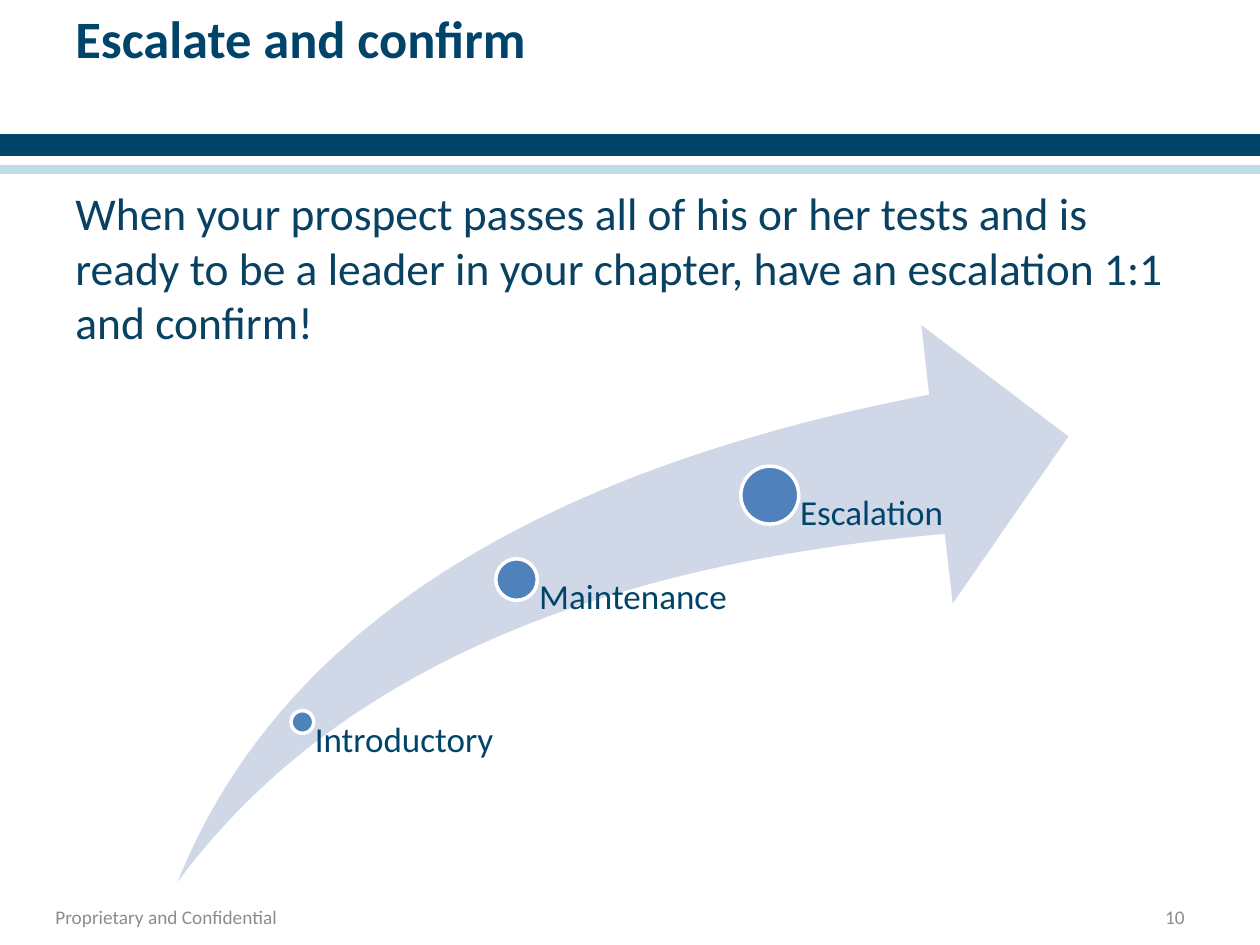
from pptx import Presentation
from pptx.dml.color import RGBColor
from pptx.enum.shapes import MSO_SHAPE as Shape
from pptx.enum.text import MSO_ANCHOR as Anchor, PP_ALIGN as Align
from pptx.util import Inches, Pt

NAVY = "00446A"
BODY_BLUE = "094163"
PALE_BLUE = "C2DBE8"
ARROW_BLUE = "D0D8E8"
DOT_BLUE = "4F81BD"
GREY = "8C8C8C"
WHITE = "FFFFFF"

BANDS = [(1.08, 0.25, NAVY), (1.25, 0.05, WHITE), (1.32, 0.05, PALE_BLUE)]
ARROW_BOTTOM = 7.0
# label, centre x, centre y, dot diameter, label indent, label width
STAGES = [
    ("Introductory", 2.4, 5.73, 0.18, 0.1, 1.65),
    ("Maintenance", 4.1, 4.6, 0.33, 0.18, 1.7),
    ("Escalation", 6.11, 3.93, 0.46, 0.24, 1.7),
]


def color(hex_string):
    return RGBColor.from_string(hex_string)


def add_shape(slide, kind, box, fill, line=None):
    shape = slide.shapes.add_shape(kind, *map(Inches, box))
    shape.shadow.inherit = False
    shape.fill.solid()
    shape.fill.fore_color.rgb = color(fill)
    if line:
        shape.line.color.rgb = color(line)
        shape.line.width = Pt(2)
    else:
        shape.line.fill.background()
    return shape


def add_text(slide, text, box, size, font_color, bold=False, align=Align.LEFT,
             anchor=Anchor.TOP, insets=(0.1, 0.05, 0.1, 0.05)):
    """Add a wrapped text box and return its paragraph; insets run left, top, right, bottom."""
    text_frame = slide.shapes.add_textbox(*map(Inches, box)).text_frame
    text_frame.word_wrap = True
    text_frame.vertical_anchor = anchor
    (text_frame.margin_left, text_frame.margin_top,
     text_frame.margin_right, text_frame.margin_bottom) = map(Inches, insets)
    text_frame.text = text
    paragraph = text_frame.paragraphs[0]
    paragraph.alignment = align
    font = paragraph.runs[0].font
    font.name = "Calibri"
    font.size = Pt(size)
    font.bold = bold
    font.color.rgb = color(font_color)
    return paragraph


def add_stage(slide, label, x, y, diameter, indent, width):
    """Add a dot with its label hanging from the dot's centre."""
    radius = diameter / 2
    add_shape(slide, Shape.OVAL, (x - radius, y - radius, diameter, diameter),
              DOT_BLUE, WHITE)
    paragraph = add_text(slide, label, (x, y, width, ARROW_BOTTOM - y), 20, NAVY,
                         insets=(indent, 0, 0, 0))
    paragraph.line_spacing = 0.9


def add_footer(slide):
    add_text(slide, "Proprietary and Confidential", (0.33, 7.1, 2.57, 0.35), 11, GREY,
             anchor=Anchor.MIDDLE, insets=(0.11, 0.06, 0.11, 0.06))
    add_text(slide, "10", (7.17, 7.1, 2.33, 0.35), 11, GREY,
             align=Align.RIGHT, anchor=Anchor.MIDDLE)


def main():
    presentation = Presentation()
    presentation.slide_width = Inches(10)
    presentation.slide_height = Inches(7.5)
    slide = presentation.slides.add_slide(presentation.slide_layouts[6])

    for top, height, fill in BANDS:
        add_shape(slide, Shape.RECTANGLE, (0, top, 10, height), fill, fill)
    add_footer(slide)
    add_text(slide, "Escalate and confirm", (0.5, 0, 9, 1.25), 30, NAVY, bold=True)
    add_text(slide, "When your prospect passes all of his or her tests and is ready to be "
             "a leader in your chapter, have an escalation 1:1 and confirm!",
             (0.5, 1.42, 8.92, 5.75), 26, BODY_BLUE)

    arrow = add_shape(slide, Shape.SWOOSH_ARROW, (1.41, 2.58, 7.07, ARROW_BOTTOM - 2.58),
                      ARROW_BLUE)
    arrow.adjustments[0] = 0.25
    arrow.adjustments[1] = 0.25
    for stage in STAGES:
        add_stage(slide, *stage)

    presentation.save("out.pptx")


if __name__ == "__main__":
    main()
